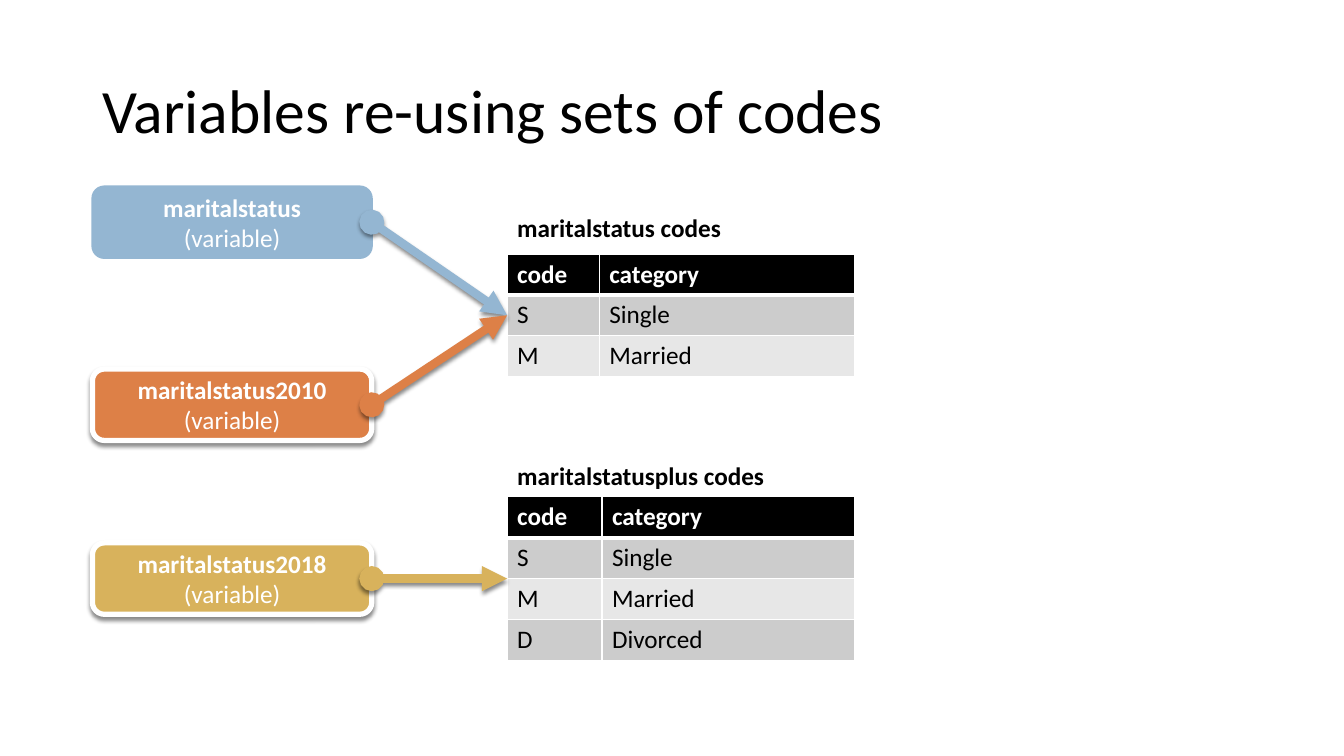
import pptx
import pptx.util
import pptx.dml.color
import pptx.enum.shapes
import pptx.enum.text
import pptx.oxml
import pptx.oxml.ns
from lxml import etree

Cm = pptx.util.Cm
Pt = pptx.util.Pt
qn = pptx.oxml.ns.qn

COLORS = {
    "black": "000000", "white": "FFFFFF", "dark": "CCCCCC", "light": "E7E7E7",
    "blue": "94B6D2", "orange": "DD8047", "gold": "D8B25C",
}
ROW = 1.03        # table row height, cm
LEFT = 2.33       # left edge of the variables
WIDE, HIGH = 7.04, 1.8
CODES = 12.78     # left edge of the code tables


def color(name):
    return pptx.dml.color.RGBColor.from_string(COLORS[name])


def style(run, ink, **extra):
    values = {"name": "Calibri", "size": Pt(18), "bold": False, **extra}
    for key, value in values.items():
        setattr(run.font, key, value)
    run.font.color.rgb = color(ink)


def write(para, text, ink, **extra):
    run = para.add_run()
    run.text = text
    style(run, ink, **extra)


def shade(item):
    """Give a shape or connector a soft shadow below it."""
    props = item._element.spPr
    effects = props.find(qn("a:effectLst"))
    if effects is None:
        effects = etree.SubElement(props, qn("a:effectLst"))
    shadow = etree.SubElement(effects, qn("a:outerShdw"), blurRad="38100",
                              dist="30000", dir="5400000", rotWithShape="0")
    tint = etree.SubElement(shadow, qn("a:srgbClr"), val=COLORS["black"])
    etree.SubElement(tint, qn("a:alpha"), val="45000")


def title(slide, text):
    box = slide.shapes.add_textbox(Cm(LEFT), Cm(1.01), Cm(29.21), Cm(3.68))
    frame = box.text_frame
    frame.word_wrap = True
    frame.vertical_anchor = pptx.enum.text.MSO_ANCHOR.MIDDLE
    para = frame.paragraphs[0]
    para.line_spacing = 0.9
    write(para, text, "black", size=Pt(44))


def node(slide, name, top, fill, edge, width):
    """Draw a variable as a rounded box."""
    box = slide.shapes.add_shape(
        pptx.enum.shapes.MSO_SHAPE.ROUNDED_RECTANGLE,
        Cm(LEFT), Cm(top), Cm(WIDE), Cm(HIGH))
    box.shadow.inherit = False
    box.fill.solid()
    box.fill.fore_color.rgb = color(fill)
    box.line.color.rgb = color(edge)
    box.line.width = Pt(width)
    frame = box.text_frame
    frame.word_wrap = True
    frame.vertical_anchor = pptx.enum.text.MSO_ANCHOR.MIDDLE
    para = frame.paragraphs[0]
    para.alignment = pptx.enum.text.PP_ALIGN.CENTER
    write(para, name, "white", bold=True)
    para.add_line_break()
    write(para, "(variable)", "white")
    return box


def arrow(slide, box, end, ink):
    """Link a variable to the left side of a code table."""
    link = slide.shapes.add_connector(
        pptx.enum.shapes.MSO_CONNECTOR.STRAIGHT,
        Cm(LEFT + WIDE), box.top, Cm(CODES), Cm(end))
    link.begin_connect(box, 3)
    link.line.color.rgb = color(ink)
    link.line.width = Pt(6)
    line = link.line._get_or_add_ln()
    etree.SubElement(line, qn("a:headEnd"), type="oval")
    etree.SubElement(line, qn("a:tailEnd"), type="triangle")
    shade(link)


def border(cell, top, bottom):
    props = cell._tc.get_or_add_tcPr()
    for side, width in {"L": 0.96, "R": 0.96, "T": top, "B": bottom}.items():
        line = etree.SubElement(props, qn("a:ln" + side), w=str(Pt(width)))
        fill = etree.SubElement(line, qn("a:solidFill"))
        etree.SubElement(fill, qn("a:srgbClr"), val=COLORS["white"])


def table(slide, top, widths, rows, fills, ink):
    """Draw a table whose first row is bold, with a thick rule under it."""
    frame = slide.shapes.add_table(
        len(rows), len(widths), Cm(CODES), Cm(top),
        Cm(sum(widths)), Cm(ROW * len(rows)))
    grid = frame.table
    grid.first_row = grid.horz_banding = False
    for col, width in zip(grid.columns, widths):
        col.width = Cm(width)
    for r, row in enumerate(rows):
        grid.rows[r].height = Cm(ROW)
        for c, text in enumerate(row):
            cell = grid.cell(r, c)
            border(cell, 3 if r == 1 else 0.96, 3 if r == 0 else 0.96)
            if fills:
                cell.fill.solid()
                cell.fill.fore_color.rgb = color(fills[r])
            else:
                cell.fill.background()
            write(cell.text_frame.paragraphs[0], text,
                  "black" if r else ink, bold=r == 0)


def codes(slide, name, cap, top, widths, rows):
    """Draw a caption and its code list; return the list's middle height."""
    table(slide, cap, [7.29], [[name]], None, "black")
    rows = [("code", "category")] + rows
    fills = ["black"] + ["light" if r % 2 else "dark"
                         for r in range(len(rows) - 1)]
    table(slide, top, widths, rows, fills, "white")
    return top + ROW * len(rows) / 2


def main():
    deck = pptx.Presentation()
    deck.slide_width, deck.slide_height = Cm(33.87), Cm(19.05)
    slide = deck.slides.add_slide(deck.slide_layouts[6])

    title(slide, "Variables re-using sets of codes")

    # Code tables
    pair = [("S", "Single"), ("M", "Married")]
    base = codes(slide, "maritalstatus codes", 5.26, 6.4, [2.32, 6.44], pair)
    plus = codes(slide, "maritalstatusplus codes", 11.5, 12.52, [2.39, 6.37],
                 pair + [("D", "Divorced")])

    # Variables and their arrows
    for name, top, ink, edge, width, end in (
            ("maritalstatus", 4.7, "blue", "blue", 1.5, base),
            ("maritalstatus2010", 9.3, "orange", "white", 3.75, base),
            ("maritalstatus2018", 13.68, "gold", "white", 3.75, plus)):
        box = node(slide, name, top, ink, edge, width)
        if edge == "white":
            shade(box)
        arrow(slide, box, end, ink)

    deck.save("out.pptx")


if __name__ == "__main__":
    main()
